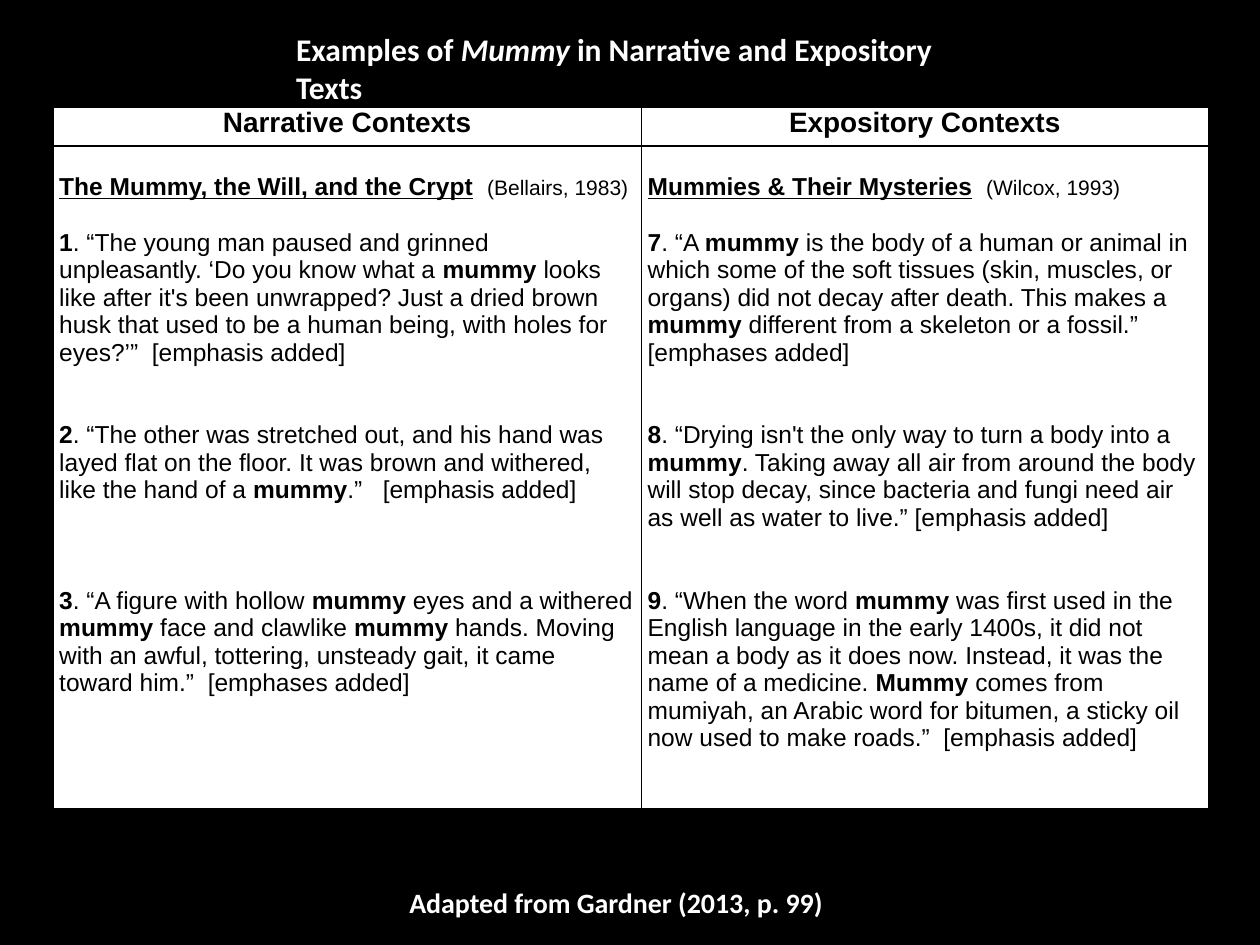
from lxml.etree import SubElement
from pptx import Presentation
from pptx.dml.color import RGBColor
from pptx.enum.text import MSO_ANCHOR, MSO_AUTO_SIZE, PP_ALIGN
from pptx.oxml import parse_xml
from pptx.oxml.ns import nsdecls, qn
from pptx.util import Inches, Pt

WIDTH, HEIGHT = Inches(10), Inches(7.5)
BLACK, WHITE = "000000", "FFFFFF"
BODY_SIZE = 14
LINE = 15.75
COLUMN_WIDTHS = (4.67, 4.5)
ROW_HEIGHTS = (0.31, 5.26)

CONTEXTS = [
    {
        "header": "Narrative Contexts",
        "book": "The Mummy, the Will, and the Crypt",
        "citation": "(Bellairs, 1983)",
        "quotes": [
            (1, "*1*. “The young man paused and grinned unpleasantly. ‘Do you know what a *mummy* looks "
                "like after it's been unwrapped? Just a dried brown husk that used to be a human being, "
                "with holes for eyes?’”  [emphasis added]"),
            (2, "*2*. “The other was stretched out, and his hand was layed flat on the floor. It was "
                "brown and withered, like the hand of a *mummy*.”   [emphasis added]"),
            (3, "*3*. “A figure with hollow *mummy* eyes and a withered *mummy* face and clawlike "
                "*mummy* hands. Moving with an awful, tottering, unsteady gait, it came toward him.”  "
                "[emphases added]"),
        ],
    },
    {
        "header": "Expository Contexts",
        "book": "Mummies & Their Mysteries",
        "citation": "(Wilcox, 1993)",
        "quotes": [
            (1, "*7*. “A *mummy* is the body of a human or animal in which some of the soft tissues "
                "(skin, muscles, or organs) did not decay after death. This makes a *mummy* different "
                "from a skeleton or a fossil.”   [emphases added]"),
            (2, "*8*. “Drying isn't the only way to turn a body into a *mummy*. Taking away all air from "
                "around the body will stop decay, since bacteria and fungi need air as well as water to "
                "live.” [emphasis added]"),
            (2, "*9*. “When the word *mummy* was first used in the English language in the early 1400s, "
                "it did not mean a body as it does now. Instead, it was the name of a medicine. *Mummy* "
                "comes from mumiyah, an Arabic word for bitumen, a sticky oil now used to make roads.”  "
                "[emphasis added]"),
        ],
    },
]


def color(value):
    """Turn a hex string into a colour."""
    return RGBColor.from_string(value)


def format_font(paragraph, name, size, value, bold=None):
    """Set the font shared by all runs of a paragraph."""
    font = paragraph.font
    font.name, font.size, font.bold = name, Pt(size), bold
    font.color.rgb = color(value)


def add_marked_runs(paragraph, text, attribute):
    """Add runs, switching a font attribute on between asterisks."""
    for index, part in enumerate(text.split("*")):
        if part:
            run = paragraph.add_run()
            run.text = part
            setattr(run.font, attribute, index % 2 == 1)


def fill_caption(shape, text, size, left, top, width, height):
    """Place a white bold one-line caption."""
    shape.left, shape.top = int(WIDTH * left), int(HEIGHT * top)
    shape.width, shape.height = int(WIDTH * width), int(HEIGHT * height)
    frame = shape.text_frame
    frame.word_wrap = False
    frame.auto_size = MSO_AUTO_SIZE.SHAPE_TO_FIT_TEXT
    frame.vertical_anchor = MSO_ANCHOR.TOP
    paragraph = frame.paragraphs[0]
    paragraph.alignment = PP_ALIGN.LEFT
    format_font(paragraph, "Calibri", size, WHITE, True)
    add_marked_runs(paragraph, text, "italic")


def style_cell(cell):
    """Give a cell its white fill, narrow margins and black borders."""
    cell.margin_left = cell.margin_right = Inches(0.05)
    cell.margin_top = cell.margin_bottom = 0
    cell.fill.solid()
    cell.fill.fore_color.rgb = color(WHITE)
    properties = cell._tc.get_or_add_tcPr()
    for position, side in enumerate(("lnL", "lnR", "lnT", "lnB")):
        border = parse_xml(f'<a:{side} {nsdecls("a")} w="{Pt(1)}"/>')
        fill = SubElement(border, qn("a:solidFill"))
        SubElement(fill, qn("a:srgbClr"), val=BLACK)
        properties.insert(position, border)


def fill_header(cell, text):
    """Write a centred column header."""
    style_cell(cell)
    paragraph = cell.text_frame.paragraphs[0]
    paragraph.alignment = PP_ALIGN.CENTER
    paragraph.space_after = Pt(2.4)
    format_font(paragraph, "Arial", 16, BLACK, True)
    add_marked_runs(paragraph, text, "italic")


def fill_context(cell, context):
    """Write the book heading and its quotations."""
    style_cell(cell)
    cell.margin_top = Pt(LINE)
    heading = cell.text_frame.paragraphs[0]
    format_font(heading, "Arial", BODY_SIZE, BLACK)
    add_marked_runs(heading, f"*{context['book']}*  ", "bold")
    heading.runs[0].font.underline = True
    citation = heading.add_run()
    citation.text = context["citation"]
    citation.font.size, citation.font.bold = Pt(12), False
    for gap_lines, quote in context["quotes"]:
        paragraph = cell.text_frame.add_paragraph()
        paragraph.space_before = Pt(gap_lines * LINE)
        format_font(paragraph, "Arial", BODY_SIZE, BLACK)
        add_marked_runs(paragraph, quote, "bold")


def add_context_table(slide):
    """Add the two-column comparison of contexts."""
    frame = slide.shapes.add_table(
        len(ROW_HEIGHTS), len(CONTEXTS), Inches(0.42), Inches(0.85),
        Inches(sum(COLUMN_WIDTHS)), Inches(sum(ROW_HEIGHTS)))
    table = frame.table
    table.first_row = table.horz_banding = False
    for row, height in zip(table.rows, ROW_HEIGHTS):
        row.height = Inches(height)
    for index, (context, width) in enumerate(zip(CONTEXTS, COLUMN_WIDTHS)):
        table.columns[index].width = Inches(width)
        fill_header(table.cell(0, index), context["header"])
        fill_context(table.cell(1, index), context)


def main():
    """Build and save the slide."""
    presentation = Presentation()
    presentation.slide_width, presentation.slide_height = WIDTH, HEIGHT
    slide = presentation.slides.add_slide(presentation.slide_layouts[5])
    slide.background.fill.solid()
    slide.background.fill.fore_color.rgb = color(BLACK)
    add_context_table(slide)
    fill_caption(slide.shapes.title, "Examples of *Mummy* in Narrative and Expository Texts",
                 18, 0.225, 0.025, 0.58, 0.05)
    fill_caption(slide.shapes.add_textbox(0, 0, 0, 0), "Adapted from Gardner (2013, p. 99)",
                 16, 0.315, 0.93, 0.37, 0.05)
    presentation.save("out.pptx")


if __name__ == "__main__":
    main()
